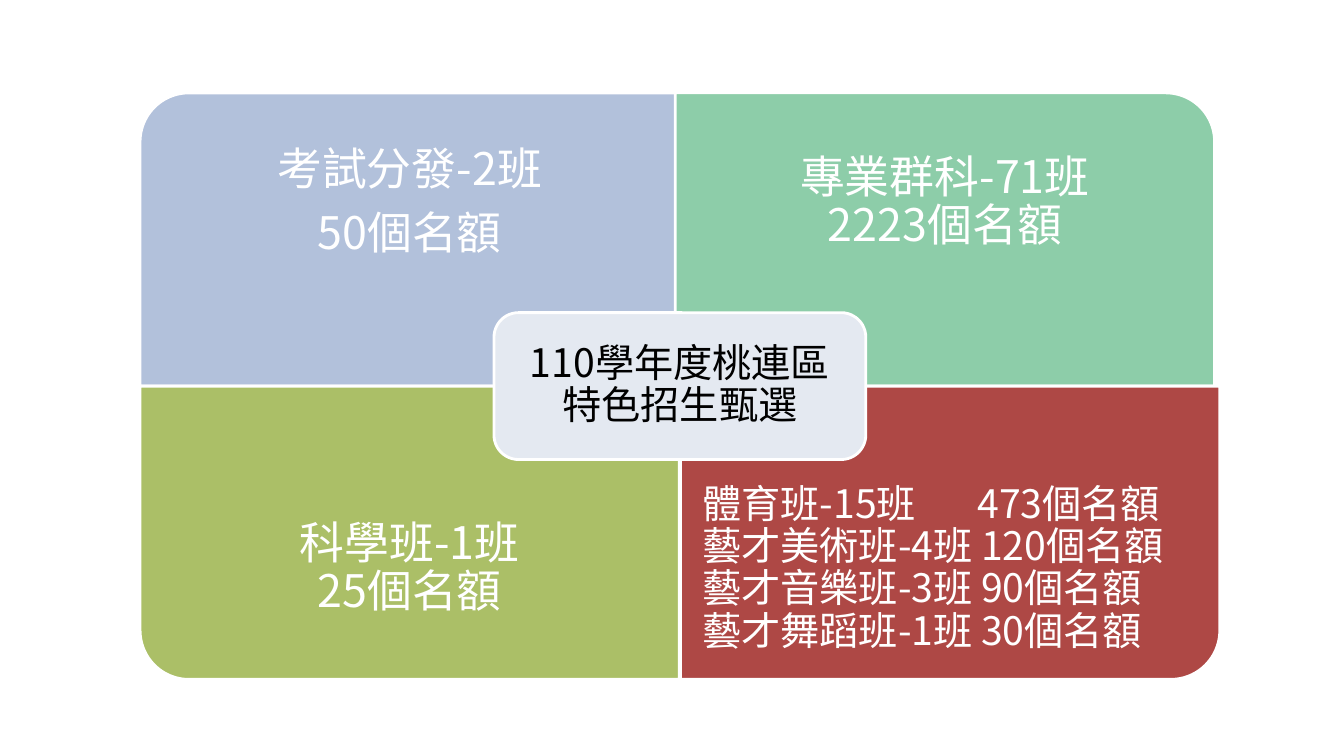
from dataclasses import dataclass

from lxml import etree
from pptx import Presentation
from pptx.dml.color import RGBColor
from pptx.enum.shapes import MSO_SHAPE
from pptx.enum.text import MSO_ANCHOR, PP_ALIGN
from pptx.oxml.ns import qn
from pptx.util import Cm, Pt

ONE_ROUND_CORNER = MSO_SHAPE.ROUND_1_RECTANGLE
ROUNDED = MSO_SHAPE.ROUNDED_RECTANGLE
MIDDLE = MSO_ANCHOR.MIDDLE
CENTER = PP_ALIGN.CENTER
LEFT = PP_ALIGN.LEFT


@dataclass(frozen=True)
class Theme:
    font: str = "Noto Sans CJK SC"
    large: int = 32
    medium: int = 28
    white: str = "FFFFFF"
    black: str = "000000"
    blue: str = "B2C1DB"
    green: str = "8DCDA9"
    olive: str = "ABBF67"
    red: str = "AE4845"
    pale: str = "E4E9F1"
    line_width: float = 2


THEME = Theme()

# Matrix geometry in centimetres
QUADRANT_WIDTH, QUADRANT_HEIGHT = 13.59, 7.39
TEXT_HEIGHT = 5.56
MATRIX_LEFT, MATRIX_TOP = 3.53, 2.34
MATRIX_MIDDLE = MATRIX_TOP + QUADRANT_HEIGHT
QUOTA_TAB = 6.93


def add_panel(page, kind, left, top, width, height, fill, rotation=0):
    """Add a filled shape; left and top give its corner after quarter turns."""
    if rotation % 180:
        left += (width - height) / 2
        top += (height - width) / 2
        width, height = height, width
    panel = page.shapes.add_shape(kind, Cm(left), Cm(top), Cm(width), Cm(height))
    panel.rotation = rotation
    panel.shadow.inherit = False
    panel.fill.solid()
    panel.fill.fore_color.rgb = RGBColor.from_string(fill)
    panel.line.color.rgb = RGBColor.from_string(THEME.white)
    panel.line.width = Pt(THEME.line_width)
    return panel


def add_tab_stop(para, position):
    tabs = etree.SubElement(para._p.get_or_add_pPr(), qn("a:tabLst"))
    etree.SubElement(tabs, qn("a:tab"), pos=str(Cm(position)), algn="l")


def write_text(box, paragraphs, size=THEME.large, color=THEME.white,
               align=CENTER, inset=0.62, tab=None):
    frame = box.text_frame
    frame.word_wrap = True
    frame.vertical_anchor = MIDDLE
    frame.margin_left = frame.margin_right = Cm(inset)
    frame.margin_top = frame.margin_bottom = Cm(inset)
    for index, text in enumerate(paragraphs):
        para = frame.add_paragraph() if index else frame.paragraphs[0]
        para.text = text
        para.alignment = align
        para.line_spacing = 0.9
        para.space_after = Pt(0.35 * size)
        if tab is not None:
            add_tab_stop(para, tab)
        for span in para.runs:
            span.font.size = Pt(size)
            span.font.name = THEME.font
            span.font.color.rgb = RGBColor.from_string(color)
            etree.SubElement(span.font._element, qn("a:ea"), typeface=THEME.font)


def add_quadrant(page, left, top, fill, rotation, paragraphs, **text_format):
    """Add one panel with its text on the side away from the matrix centre."""
    add_panel(page, ONE_ROUND_CORNER, left, top,
              QUADRANT_WIDTH, QUADRANT_HEIGHT, fill, rotation)
    text_top = top
    if top == MATRIX_MIDDLE:
        text_top += QUADRANT_HEIGHT - TEXT_HEIGHT
    box = page.shapes.add_textbox(Cm(left), Cm(text_top),
                                  Cm(QUADRANT_WIDTH), Cm(TEXT_HEIGHT))
    write_text(box, paragraphs, **text_format)


def main():
    deck = Presentation()
    deck.slide_width, deck.slide_height = Cm(33.87), Cm(19.05)
    page = deck.slides.add_slide(deck.slide_layouts[6])

    add_quadrant(page, MATRIX_LEFT, MATRIX_TOP, THEME.blue, 270,
                 ["考試分發-2班", "50個名額"])
    add_quadrant(page, 17.02, MATRIX_TOP, THEME.green, 0,
                 ["專業群科-71班\v2223個名額"])
    add_quadrant(page, MATRIX_LEFT, MATRIX_MIDDLE, THEME.olive, 180,
                 ["科學班-1班\v25個名額"])
    arts_and_sports = "\v".join([
        "體育班-15班\t473個名額",
        "藝才美術班-4班 120個名額",
        "藝才音樂班-3班 90個名額",
        "藝才舞蹈班-1班 30個名額",
    ])
    add_quadrant(page, 17.15, MATRIX_MIDDLE, THEME.red, 90, [arts_and_sports],
                 size=THEME.medium, align=LEFT, inset=0.55, tab=QUOTA_TAB)

    hub = add_panel(page, ROUNDED, 12.45, 7.88, 9.37, 3.7, THEME.pale)
    write_text(hub, ["110學年度桃連區特色招生甄選"],
               size=THEME.medium, color=THEME.black, inset=0.3)

    deck.save("out.pptx")


if __name__ == "__main__":
    main()
